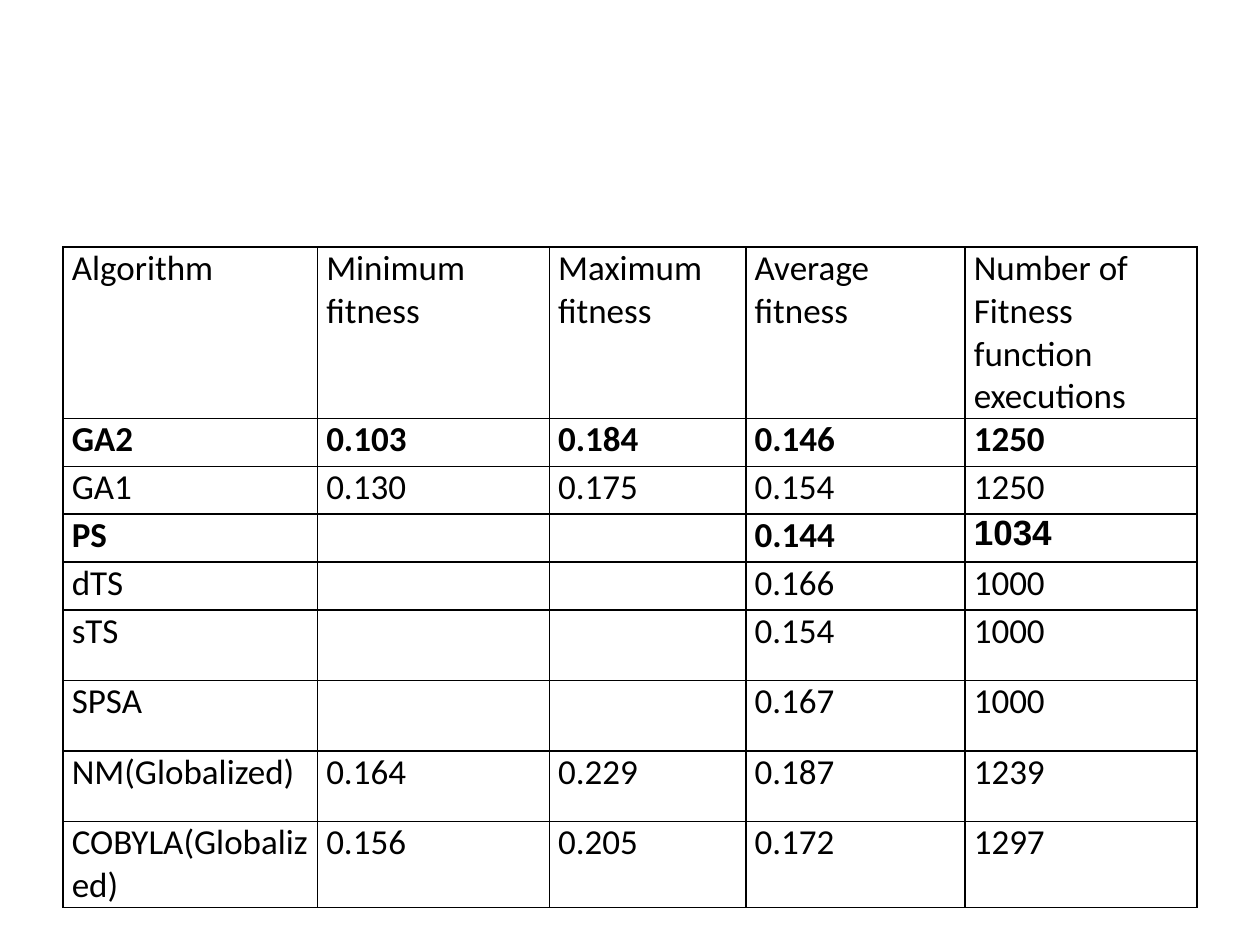
"""Build a slide with a table comparing the fitness of search algorithms."""
import pptx
import pptx.util
import pptx.oxml
import pptx.oxml.ns
import pptx.dml.color
import pptx.enum.text

Inches = pptx.util.Inches
FONT, INK, PAPER = "Calibri", "000000", "FFFFFF"
ROWS = [
    ("Algorithm", "Minimum fitness", "Maximum fitness", "Average fitness",
     "Number of Fitness function executions"),
    ("GA2", "0.103", "0.184", "0.146", "1250"),
    ("GA1", "0.130", "0.175", "0.154", "1250"),
    ("PS", "", "", "0.144", "1034"),
    ("dTS", "", "", "0.166", "1000"),
    ("sTS", "", "", "0.154", "1000"),
    ("SPSA", "", "", "0.167", "1000"),
    ("NM(Globalized)", "0.164", "0.229", "0.187", "1239"),
    ("COBYLA(Globalized)", "0.156", "0.205", "0.172", "1297"),
]
BOLD = ("GA2", "PS")
RTL = ("1034",)
WIDTHS = [2.02, 1.84, 1.56, 1.74, 1.84]
HEIGHTS = [1.27] + [0.38] * 4 + [0.56] * 4
LEFT, TOP = 0.5, 1.96


def color(code):
    return pptx.dml.color.RGBColor.from_string(code)


def write(cell, text, size=20, bold=False, rtl=False):
    para = cell.text_frame.paragraphs[0]
    para.alignment = pptx.enum.text.PP_ALIGN.LEFT
    run = para.add_run()
    run.text = text
    font = run.font
    font.name, font.size, font.bold = FONT, pptx.util.Pt(size), bold
    font.color.rgb = color(INK)
    if rtl:
        para._p.get_or_add_pPr().set("rtl", "1")
        face = pptx.oxml.parse_xml(
            f'<a:cs {pptx.oxml.ns.nsdecls("a")} typeface="Arial"/>')
        run._r.get_or_add_rPr().append(face)


def border(cell, width=1):
    props = cell._tc.get_or_add_tcPr()
    for spot, side in enumerate(("lnL", "lnR", "lnT", "lnB")):
        props.insert(spot, pptx.oxml.parse_xml(
            f'<a:{side} {pptx.oxml.ns.nsdecls("a")} w="{pptx.util.Pt(width)}">'
            f'<a:solidFill><a:srgbClr val="{INK}"/></a:solidFill></a:{side}>'))


def style(cell):
    cell.margin_left = cell.margin_right = Inches(0.07)
    cell.margin_top = cell.margin_bottom = 0
    cell.fill.solid()
    cell.fill.fore_color.rgb = color(PAPER)
    border(cell)


def main():
    deck = pptx.Presentation()
    deck.slide_width, deck.slide_height = Inches(10), Inches(7.5)
    slide = deck.slides.add_slide(deck.slide_layouts[6])
    table = slide.shapes.add_table(
        len(ROWS), len(WIDTHS), Inches(LEFT), Inches(TOP),
        Inches(sum(WIDTHS)), Inches(sum(HEIGHTS))).table
    table.first_row = table.horz_banding = False
    for col, width in zip(table.columns, WIDTHS):
        col.width = Inches(width)
    for row, height, texts in zip(table.rows, HEIGHTS, ROWS):
        row.height = Inches(height)
        for cell, text in zip(row.cells, texts):
            style(cell)
            if text:
                write(cell, text, bold=texts[0] in BOLD, rtl=text in RTL)
    deck.save("out.pptx")


if __name__ == "__main__":
    main()
